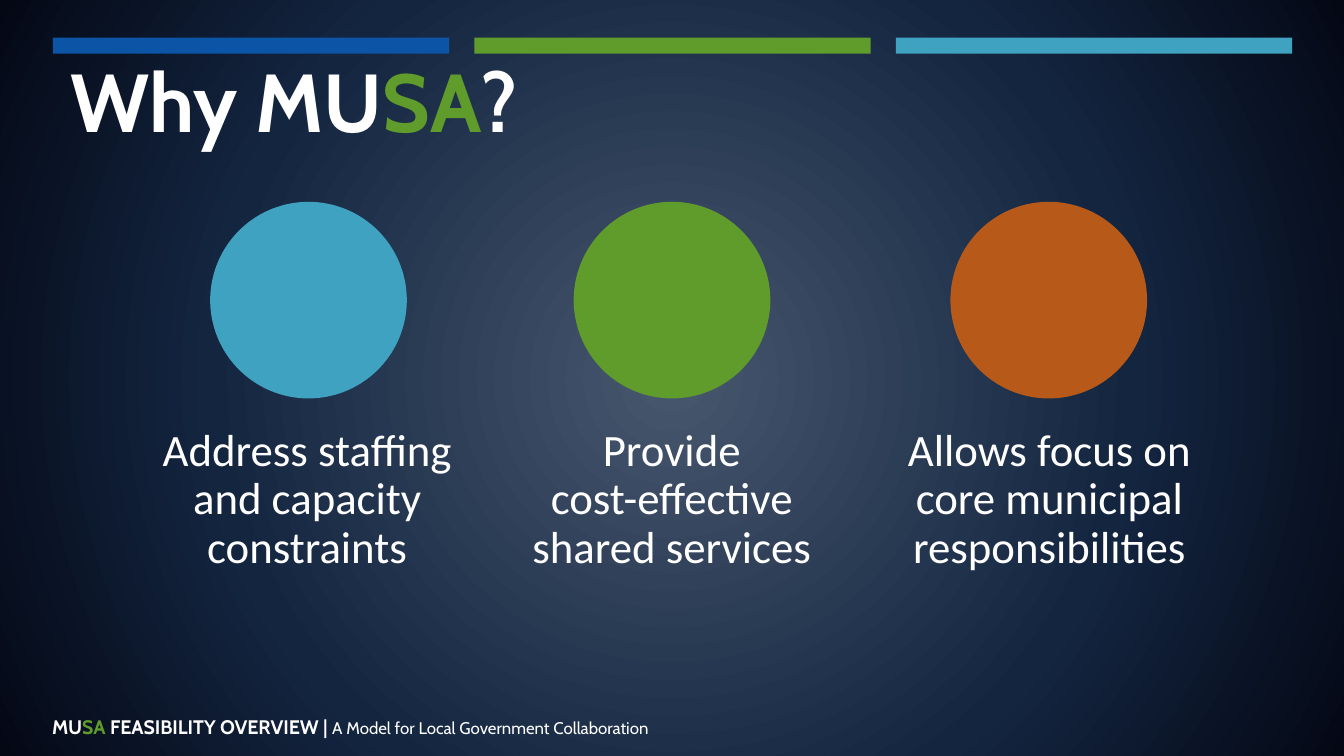
from dataclasses import dataclass

from lxml.etree import SubElement
from pptx import Presentation
from pptx.dml.color import RGBColor
from pptx.enum.shapes import MSO_SHAPE as Shape
from pptx.enum.text import MSO_ANCHOR as Anchor, MSO_AUTO_SIZE as AutoSize, PP_ALIGN as Align
from pptx.oxml.ns import qn
from pptx.util import Inches, Pt


@dataclass(frozen=True)
class Theme:
    """Colours, fonts and type sizes of the deck."""
    white: str = "FFFFFF"
    blue: str = "0C54A6"
    green: str = "5F9C2C"
    teal: str = "3FA2C1"
    orange: str = "B75919"
    glow: tuple = ((0, "47576E"), (60, "142540"), (100, "040815"))
    heading_font: str = "Cabin"
    body_font: str = "Calibri"
    title_size: float = 44
    body_size: float = 24
    footer_size: float = 10.5
    tagline_size: float = 9


def write(frame, runs, *, font, size, bold=False, align=Align.LEFT, spacing=1.0, anchor=Anchor.TOP):
    """Fill a text frame with (text, colour, overrides) runs in one paragraph."""
    frame.word_wrap = True
    frame.auto_size = AutoSize.NONE
    frame.vertical_anchor = anchor
    paragraph = frame.paragraphs[0]
    paragraph.alignment = align
    paragraph.line_spacing = spacing
    for text, colour, overrides in runs:
        for index, line in enumerate(text.split("\n")):
            if index:
                paragraph.add_line_break()
            run = paragraph.add_run()
            run.text = line
            run.font.name = font
            run.font.size = Pt(overrides.get("size", size))
            run.font.bold = overrides.get("bold", bold)
            run.font.color.rgb = RGBColor.from_string(colour)


class SlideBuilder:
    """Draws themed elements on a slide with a grid 100 columns wide."""

    def __init__(self, presentation, theme):
        """Add a title-only slide and keep its theme and grid unit."""
        self.theme = theme
        self.unit = presentation.slide_width / 100
        self.slide = presentation.slides.add_slide(presentation.slide_layouts[5])

    def place(self, *cells):
        """Turn grid columns and rows into lengths."""
        return [round(cell * self.unit) for cell in cells]

    def background(self):
        """Paint a gradient that radiates from the centre."""
        self.slide.background.fill.gradient()
        gradient = self.slide.element.find(".//" + qn("a:gradFill"))
        for child in list(gradient):
            gradient.remove(child)
        stops = SubElement(gradient, qn("a:gsLst"))
        for position, colour in self.theme.glow:
            stop = SubElement(stops, qn("a:gs"), pos=str(position * 1000))
            SubElement(stop, qn("a:srgbClr"), val=colour)
        radial = SubElement(gradient, qn("a:path"), path="circle")
        SubElement(radial, qn("a:fillToRect"), {side: "50000" for side in "ltrb"})

    def title(self, cells, runs):
        """Move and fill the title placeholder."""
        title = self.slide.shapes.title
        title.left, title.top, title.width, title.height = self.place(*cells)
        write(title.text_frame, runs, font=self.theme.heading_font, size=self.theme.title_size,
              bold=True, spacing=0.95, anchor=Anchor.MIDDLE)

    def solid(self, kind, cells, colour, shapes=None):
        """Add a filled shape without an outline."""
        shape = (shapes or self.slide.shapes).add_shape(kind, *self.place(*cells))
        shape.shadow.inherit = False
        shape.fill.solid()
        shape.fill.fore_color.rgb = RGBColor.from_string(colour)
        shape.line.fill.background()

    def text(self, cells, runs, shapes=None, **style):
        """Add a text box."""
        box = (shapes or self.slide.shapes).add_textbox(*self.place(*cells))
        write(box.text_frame, runs, **style)

    def benefit(self, circle_left, text_left, text_width, text_height, colour, text):
        """Group a circle with the benefit written below it."""
        shapes = self.slide.shapes.add_group_shape().shapes
        self.solid(Shape.OVAL, (circle_left, 15.02, 14.63, 14.63), colour, shapes)
        self.text((text_left, 31.33, text_width, text_height), [(text, self.theme.white, {})], shapes,
                  font=self.theme.body_font, size=self.theme.body_size,
                  align=Align.CENTER, spacing=0.9)


def main():
    """Build and save the slide."""
    theme = Theme()
    presentation = Presentation()
    presentation.slide_width = Inches(10)
    presentation.slide_height = presentation.slide_width * 9 // 16
    builder = SlideBuilder(presentation, theme)
    builder.background()

    for column, colour in enumerate((theme.blue, theme.green, theme.teal)):
        builder.solid(Shape.RECTANGLE, (3.93 + 31.36 * column, 2.8, 29.5, 1.2), colour)

    builder.text((2.9, 52.7, 50.4, 2.9), [
        ("MU", theme.white, {}),
        ("SA", theme.green, {}),
        (" FEASIBILITY OVERVIEW | ", theme.white, {}),
        ("A Model for Local Government Collaboration", theme.white,
         {"size": theme.tagline_size, "bold": False}),
    ], font=theme.heading_font, size=theme.footer_size, bold=True)

    builder.title((4.23, 4.2, 91.9, 7.2), [
        ("Why MU", theme.white, {}), ("SA", theme.green, {}), ("?", theme.white, {})])

    for benefit in (
        (15.64, 9.4, 26.9, 8.4, theme.teal, "Address staffing and capacity constraints"),
        (42.69, 35.43, 29.1, 8.4, theme.green, "Provide\ncost-effective shared services"),
        (70.72, 61.88, 32.4, 12.7, theme.orange, "Allows focus on\ncore municipal responsibilities"),
    ):
        builder.benefit(*benefit)

    presentation.save("out.pptx")


if __name__ == "__main__":
    main()
